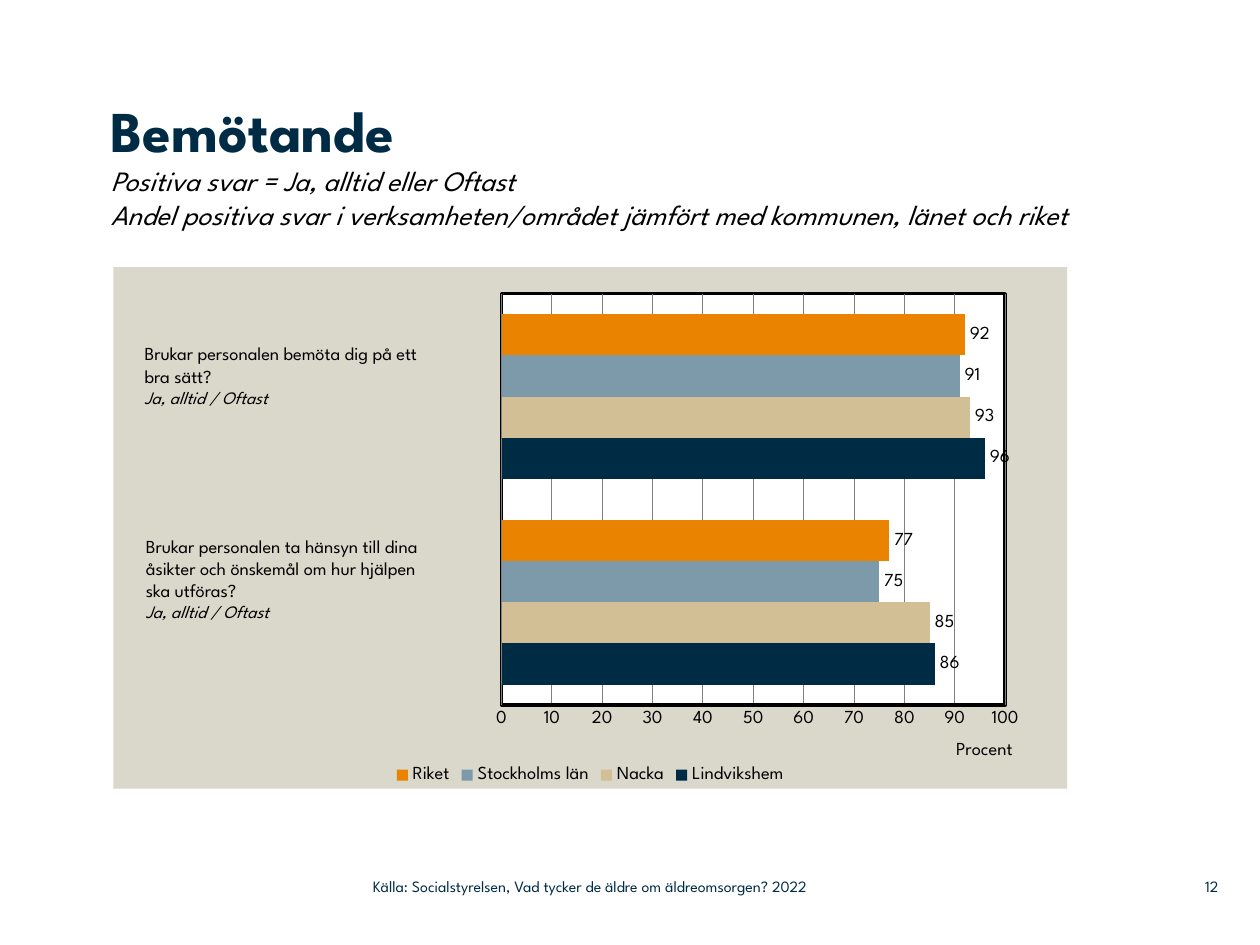
"""Build the Bemötande survey slide: a heading, a clustered bar chart and its question labels."""
from lxml import etree
from pptx import Presentation, util as u
from pptx.chart.data import CategoryChartData
from pptx.dml.color import RGBColor
from pptx.enum import chart as ch, text
from pptx.oxml.ns import qn

FONT = "League Spartan"
COLORS = {"navy": "002B45", "sand": "D3BF96", "blue": "7D9AAA", "orange": "E98300",
          "panel": "DAD7CB", "white": "FFFFFF", "black": "000000", "grid": "808080"}
TITLE = "Bemötande"
SUBTITLE = ["Positiva svar = Ja, alltid eller Oftast",
            "Andel positiva svar i verksamheten/området jämfört med kommunen, länet och riket"]
SERIES = [("Lindvikshem", (86, 96), "navy"), ("Nacka", (85, 93), "sand"),
          ("Stockholms län", (75, 91), "blue"), ("Riket", (77, 92), "orange")]
ANSWER = "Ja, alltid / Oftast"
QUESTIONS = [
    ((1.05, 2.67, 2.97, 0.81), ["Brukar personalen bemöta dig på ett", "bra sätt?"]),
    ((1.06, 4.2, 3.01, 0.98), ["Brukar personalen ta hänsyn till dina",
                               "åsikter och önskemål om hur hjälpen", "ska utföras?"]),
]
FOOTERS = [
    ((2.96, 6.89, 4.43, 0.29), "Källa: Socialstyrelsen, Vad tycker de äldre om äldreomsorgen? 2022",
     text.PP_ALIGN.LEFT),
    ((9.2, 6.89, 0.47, 0.29), "12", text.PP_ALIGN.RIGHT),
]


def rgb(name):
    return RGBColor.from_string(COLORS[name])


def style(font, size, color="black", bold=False, italic=False):
    font.name, font.size, font.bold, font.italic = FONT, u.Pt(size), bold, italic
    font.color.rgb = rgb(color)


def add_text(s, box, lines, inset=True, anchor=text.MSO_ANCHOR.TOP, align=text.PP_ALIGN.LEFT):
    """Add a text box; each line is (text, style options)."""
    tf = s.shapes.add_textbox(*map(u.Inches, box)).text_frame
    tf.word_wrap, tf.vertical_anchor = True, anchor
    if not inset:
        tf.margin_left = tf.margin_right = tf.margin_top = tf.margin_bottom = 0
    for i, (words, options) in enumerate(lines):
        p = tf.add_paragraph() if i else tf.paragraphs[0]
        p.text, p.alignment = words, align
        style(p.font, **options)


def set_layout(parent, after, **values):
    """Give a chart part a manual layout, placed after the named child."""
    for old in parent.findall(qn("c:layout")):
        parent.remove(old)
    layout = etree.Element(qn("c:layout"))
    manual = etree.SubElement(layout, qn("c:manualLayout"))
    for tag, value in values.items():
        etree.SubElement(manual, qn("c:" + tag)).set("val", str(value))
    if after:
        parent.find(qn(after)).addnext(layout)
    else:
        parent.insert(0, layout)


def fill_shape(parent, before, color, line=None):
    """Fill a chart part, with a 2 pt outline when a line colour is given."""
    sp_pr = etree.Element(qn("c:spPr"))
    solid = etree.SubElement(sp_pr, qn("a:solidFill"))
    etree.SubElement(solid, qn("a:srgbClr")).set("val", COLORS[color])
    ln = etree.SubElement(sp_pr, qn("a:ln"))
    if line:
        ln.set("w", str(u.Pt(2)))
        solid = etree.SubElement(ln, qn("a:solidFill"))
        etree.SubElement(solid, qn("a:srgbClr")).set("val", COLORS[line])
    else:
        etree.SubElement(ln, qn("a:noFill"))
    if before:
        parent.find(qn(before)).addprevious(sp_pr)
    else:
        parent.append(sp_pr)


def add_bars(s):
    data = CategoryChartData(number_format="0")
    data.categories = ["1", "2"]
    for name, values, _ in SERIES:
        data.add_series(name, values)
    box = map(u.Inches, (0.9, 2.12, 7.57, 4.14))
    chart = s.shapes.add_chart(ch.XL_CHART_TYPE.BAR_CLUSTERED, *box, data).chart
    style(chart.font, 10.5)
    chart.has_title = False
    chart.has_legend = True
    chart.legend.position = ch.XL_LEGEND_POSITION.BOTTOM
    chart.legend.include_in_layout = False
    style(chart.legend.font, 10.5)

    plot = chart.plots[0]
    plot.gap_width, plot.overlap, plot.vary_by_categories = 100, 0, False
    for series, (_, _, color) in zip(plot.series, SERIES):
        series.format.fill.solid()
        series.format.fill.fore_color.rgb = rgb(color)
        labels = series.data_labels
        labels.show_value = True
        labels.position = ch.XL_LABEL_POSITION.OUTSIDE_END
        style(labels.font, 10.5)

    chart.category_axis.visible = False
    axis = chart.value_axis
    axis.minimum_scale, axis.maximum_scale, axis.major_unit = 0, 100, 10
    axis.major_tick_mark = axis.minor_tick_mark = ch.XL_TICK_MARK.NONE
    axis.format.line.color.rgb = rgb("black")
    axis.format.line.width = u.Pt(2)
    axis.major_gridlines.format.line.color.rgb = rgb("grid")
    axis.major_gridlines.format.line.width = u.Pt(0.5)
    style(axis.tick_labels.font, 10.5)
    p = axis.axis_title.text_frame.paragraphs[0]
    p.text = "Procent"
    style(p.font, 10.5)
    set_layout(p._p.getparent().getparent().getparent(), "c:tx",
               xMode="edge", yMode="edge", x=0.88, y=0.9)

    space = chart._chartSpace
    area = space.find(".//" + qn("c:plotArea"))
    set_layout(area, None, layoutTarget="inner", xMode="edge", yMode="edge",
               x=0.407, y=0.051, w=0.528, h=0.789)
    fill_shape(area, None, "white", "black")
    fill_shape(space, "c:txPr", "panel")


def main():
    prs = Presentation()
    prs.slide_width, prs.slide_height = u.Inches(10), u.Inches(7.5)
    s = prs.slides.add_slide(prs.slide_layouts[6])
    heading = [(TITLE, dict(size=33, color="navy", bold=True))]
    heading += [(line, dict(size=16, italic=True)) for line in SUBTITLE]
    add_text(s, (0.88, 0.75, 8.04, 1.2), heading, inset=False)
    add_bars(s)
    for box, question in QUESTIONS:
        lines = [(line, dict(size=10.5)) for line in question]
        add_text(s, box, lines + [(ANSWER, dict(size=10, italic=True))])
    for box, words, align in FOOTERS:
        add_text(s, box, [(words, dict(size=9, color="navy"))], inset=False,
                 anchor=text.MSO_ANCHOR.MIDDLE, align=align)
    prs.save("out.pptx")


if __name__ == "__main__":
    main()
